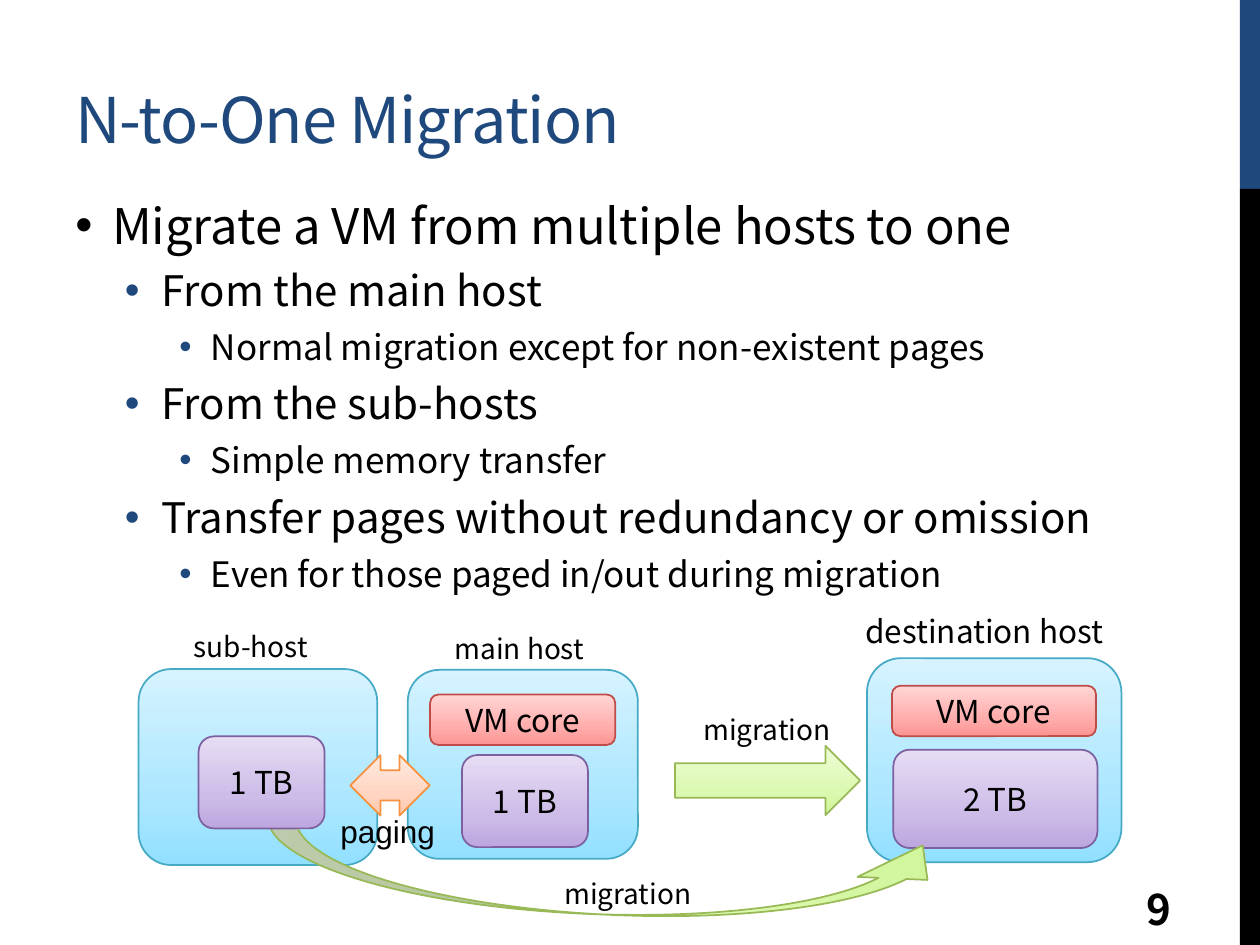
import copy
from lxml import etree
from pptx import Presentation
from pptx import util as u
from pptx.dml.color import RGBColor
from pptx.enum import shapes, text
from pptx.oxml.ns import qn

FONT = "Noto Sans CJK JP"
COLORS = {
    "navy": "1F497D", "black": "000000",
    "host": ("92E0FF", "ADE7FF", "D6F3FF", "46AAC5"),
    "core": ("FB9493", "FFADAC", "FFD6D5", "BF4C48"),
    "memory": ("BDA7DF", "CDBCE8", "E6DDF4", "7D60A0"),
    "migration": ("D0F599", "DCF9B1", "EDFDD7", "98B955"),
    "paging": ("FFC7AC", "FFD5C2", "FFEAE1", "F69240"),
}
LEVELS = [
    {"size": 28, "left": 21, "hang": 21, "bullet": "black"},
    {"size": 24, "left": 49.2, "hang": 21, "bullet": "navy"},
    {"size": 20, "left": 77.4, "hang": 18, "bullet": "navy"},
]
BULLETS = [
    (0, "Migrate a VM from multiple hosts to one"),
    (1, "From the main host"),
    (2, "Normal migration except for non-existent pages"),
    (1, "From the sub-hosts"),
    (2, "Simple memory transfer"),
    (1, "Transfer pages without redundancy or omission"),
    (2, "Even for those paged in/out during migration"),
]
HOSTS = [
    (79.2, 382.3, 136.4, 112),
    (233, 382.8, 131.5, 108),
    (495.4, 376.1, 145.4, 116.6),
]
LABELS = [
    ("sub-host", (103.7, 356.4, 83.5, 26.6), 16, FONT),
    ("main host", (252.7, 357.1, 92.9, 26.6), 16, FONT),
    ("destination host", (487.4, 346.3, 156.2, 28.8), 18, FONT),
    ("migration", (394.9, 403.6, 96.5, 26.6), 16, FONT),
    ("migration", (315.4, 497.2, 112.3, 26.6), 16, FONT),
    ("paging", (187.4, 460.5, 69.1, 28.8), 18, "Arial"),
]
SOURCE_BLOCKS = [
    ("VM core", "core", (245.8, 396.9, 105.8, 28.8)),
    ("1 TB", "memory", (113.5, 420.8, 72, 52.6)),
    ("1 TB", "memory", (264, 431.5, 72, 52.6)),
]
DESTINATION_BLOCKS = [
    ("VM core", "core", (509.7, 391.9, 116.6, 28.8)),
    ("2 TB", "memory", (510.5, 428.4, 116.6, 56.2)),
]


def points(box):
    return [u.Pt(v) for v in box]


def add_run(p, words, size, color="black", name=FONT, bold=False):
    r = p.add_run()
    r.text = words
    for key, value in {"size": u.Pt(size), "name": name, "bold": bold}.items():
        setattr(r.font, key, value)
    r.font.color.rgb = RGBColor.from_string(COLORS[color])
    return r


def add_text(s, box, anchor=text.MSO_ANCHOR.TOP):
    tf = s.shapes.add_textbox(*points(box)).text_frame
    for key, value in {"word_wrap": True, "vertical_anchor": anchor}.items():
        setattr(tf, key, value)
    return tf


def add_bar(s, box, color):
    sp = s.shapes.add_shape(shapes.MSO_SHAPE.RECTANGLE, *points(box))
    sp.shadow.inherit = False
    sp.fill.solid()
    sp.fill.fore_color.rgb = RGBColor.from_string(COLORS[color])
    sp.line.fill.background()


def add_gradient(s, kind, box, color):
    sp = s.shapes.add_shape(kind, *points(box))
    sp.shadow.inherit = False
    *stops, edge = COLORS[color]
    sp.fill.gradient()
    sp.fill.gradient_angle = 90
    stop_list = sp._element.spPr.find(".//" + qn("a:gsLst"))
    stop_list.append(copy.deepcopy(stop_list[0]))
    for stop, position, value in zip(sp.fill.gradient_stops, (0, 0.35, 1), stops):
        stop.position = position
        stop.color.rgb = RGBColor.from_string(value)
    sp.line.color.rgb = RGBColor.from_string(edge)
    sp.line.width = u.Pt(1)
    return sp


def add_block(s, words, color, box):
    sp = add_gradient(s, shapes.MSO_SHAPE.ROUNDED_RECTANGLE, box, color)
    tf = sp.text_frame
    tf.vertical_anchor = text.MSO_ANCHOR.MIDDLE
    p = tf.paragraphs[0]
    p.alignment = text.PP_ALIGN.CENTER
    add_run(p, words, 18)


def add_bullets(s, box):
    tf = add_text(s, box)
    for i, (depth, words) in enumerate(BULLETS):
        p = tf.add_paragraph() if i else tf.paragraphs[0]
        level = LEVELS[depth]
        for key, value in {"level": depth, "space_before": u.Pt(6)}.items():
            setattr(p, key, value)
        pPr = p._p.get_or_add_pPr()
        pPr.set("marL", str(u.Pt(level["left"])))
        pPr.set("indent", str(-u.Pt(level["hang"])))
        color = etree.SubElement(pPr, qn("a:buClr"))
        etree.SubElement(color, qn("a:srgbClr"), val=COLORS[level["bullet"]])
        etree.SubElement(pPr, qn("a:buFont"), typeface="Arial")
        etree.SubElement(pPr, qn("a:buChar"), char="•")
        add_run(p, words, level["size"])


def add_diagram(s):
    kinds = shapes.MSO_SHAPE
    for box in HOSTS:
        add_gradient(s, kinds.ROUNDED_RECTANGLE, box, "host")
    add_gradient(s, kinds.RIGHT_ARROW, (385.7, 426.2, 105.8, 39.6), "migration")
    for block in DESTINATION_BLOCKS:
        add_block(s, *block)
    sweep = add_gradient(s, kinds.CURVED_RIGHT_ARROW, (325.4, 301.7, 47.5, 394.6), "migration")
    sweep.rotation = 272.5
    for i, value in enumerate((0.336, 0.844, 0.414)):
        sweep.adjustments[i] = value
    add_gradient(s, kinds.LEFT_RIGHT_ARROW, (200.2, 431.5, 45.4, 34.6), "paging")
    for block in SOURCE_BLOCKS:
        add_block(s, *block)
    for words, box, size, name in LABELS:
        add_run(add_text(s, box).paragraphs[0], words, size, name=name)


def main():
    prs = Presentation()
    prs.slide_width, prs.slide_height = u.Pt(720), u.Pt(540)
    s = prs.slides.add_slide(prs.slide_layouts[6])
    add_bar(s, (708.5, 0, 11.5, 108), "navy")
    add_bar(s, (708.5, 108, 11.5, 432), "black")
    title = add_text(s, (36, 25.5, 641.5, 67.5), text.MSO_ANCHOR.BOTTOM)
    r = add_run(title.paragraphs[0], "N-to-One Migration", 36, "navy")
    r.font._element.set("spc", "-60")
    add_bullets(s, (36, 108, 641.5, 374.4))
    number = add_text(s, (648, 504.7, 61.2, 28.8), text.MSO_ANCHOR.MIDDLE)
    add_run(number.paragraphs[0], "9", 24, bold=True)
    add_diagram(s)
    prs.save("out.pptx")


if __name__ == "__main__":
    main()
